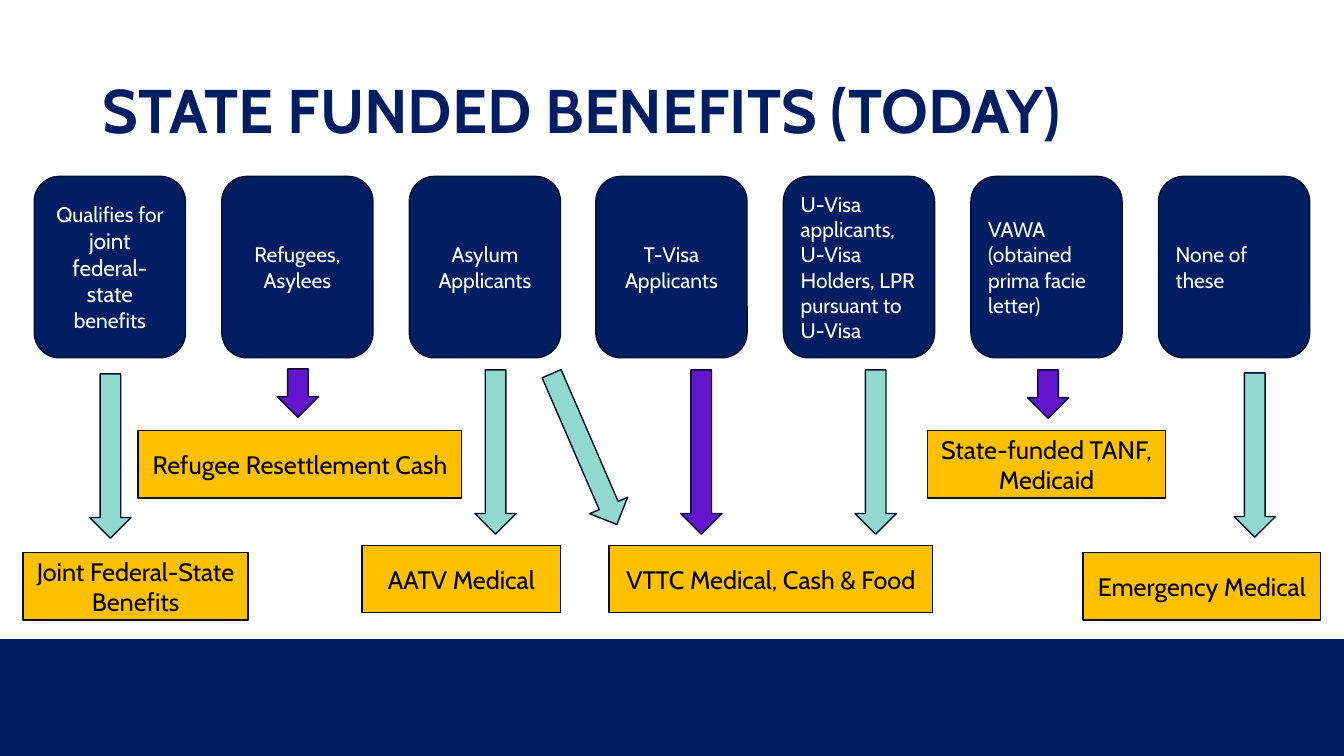
import pptx
import pptx.util
import pptx.dml.color
import pptx.enum.shapes
import pptx.enum.text

PX = 9144
FONT = "Cabin"
NAVY, GOLD, MINT, PLUM = "001E61", "FFC000", "91D9CF", "6415CD"
EDGE, BLACK, WHITE = "000D2B", "000000", "FFFFFF"
KIND = pptx.enum.shapes.MSO_SHAPE
ALIGN = pptx.enum.text.PP_ALIGN
MIDDLE = pptx.enum.text.MSO_ANCHOR.MIDDLE


def color(code):
    return pptx.dml.color.RGBColor.from_string(code)


def draw(kind, x, y, w, h, fill, lines=(), size=18, ink=BLACK, align=ALIGN.CENTER):
    shape = slide.shapes.add_shape(kind, x * PX, y * PX, w * PX, h * PX)
    shape.shadow.inherit = False
    shape.fill.solid()
    shape.fill.fore_color.rgb = color(fill)
    shape.line.color.rgb = color(EDGE)
    shape.line.width = pptx.util.Pt(1)
    frame = shape.text_frame
    frame.word_wrap = True
    frame.vertical_anchor = MIDDLE
    for i, line in enumerate(lines):
        para = frame.add_paragraph() if i else frame.paragraphs[0]
        para.text = line
        para.alignment = align
        para.font.name = FONT
        para.font.size = pptx.util.Pt(size)
        para.font.color.rgb = color(ink)
    return shape


deck = pptx.Presentation()
deck.slide_width = 1333 * PX
deck.slide_height = 750 * PX
slide = deck.slides.add_slide(deck.slide_layouts[5])

band = draw(KIND.RECTANGLE, 0, 634, 1333, 116, NAVY)
band.line.fill.background()

title = slide.shapes.title
title.left, title.top, title.width, title.height = [n * PX for n in (92, 40, 1150, 145)]
title.text_frame.text = "STATE FUNDED BENEFITS (TODAY)"
title.text_frame.auto_size = pptx.enum.text.MSO_AUTO_SIZE.NONE
title.text_frame.vertical_anchor = MIDDLE
head = title.text_frame.paragraphs[0]
head.alignment = ALIGN.LEFT
head.line_spacing = 0.9
head.font.name = FONT
head.font.size = pptx.util.Pt(44)
head.font.bold = True
head.font.color.rgb = color(NAVY)

awards = [
    (23, 548, 223, ["Joint Federal-State", "Benefits"]),
    (137, 427, 321, ["Refugee Resettlement Cash"]),
    (359, 541, 197, ["AATV Medical"]),
    (604, 541, 321, ["VTTC Medical, Cash & Food"]),
    (920, 427, 236, ["State-funded TANF, Medicaid"]),
    (1074, 548, 236, ["Emergency Medical"]),
]
for x, y, w, lines in awards:
    draw(KIND.RECTANGLE, x, y, w, 67, GOLD, lines)

groups = [
    ("Qualifies for ", ALIGN.CENTER),
    ("Refugees, Asylees", ALIGN.CENTER),
    ("Asylum Applicants", ALIGN.CENTER),
    ("T-Visa Applicants", ALIGN.CENTER),
    ("U-Visa applicants, U-Visa Holders, LPR pursuant to U-Visa", ALIGN.LEFT),
    ("VAWA (obtained prima facie letter)", ALIGN.LEFT),
    ("None of these", ALIGN.LEFT),
]
cards = []
for i, (text, align) in enumerate(groups):
    x = 34 + round(i * 185.8)
    cards.append(draw(KIND.ROUNDED_RECTANGLE, x, 175, 150, 180, NAVY, [text], 15, WHITE, align))

first = cards[0].text_frame.paragraphs[0]
for text, size in [("joint federal-state ", 16), ("benefits", 15)]:
    run = first.add_run()
    run.text = text
    run.font.size = pptx.util.Pt(size)

arrows = [
    (1224, 370, 163, MINT, 0),
    (1019, 367, 48, PLUM, 0),
    (89, 371, 163, MINT, 0),
    (275, 366, 48, PLUM, 0),
    (471, 367, 163, MINT, 0),
    (848, 367, 163, MINT, 0),
    (675, 367, 163, PLUM, 0),
    (559, 364, 163, MINT, 336.6),
]
for x, y, h, fill, turn in arrows:
    arrow = draw(KIND.DOWN_ARROW, x, y, 41, h, fill)
    arrow.rotation = turn

deck.save("out.pptx")
